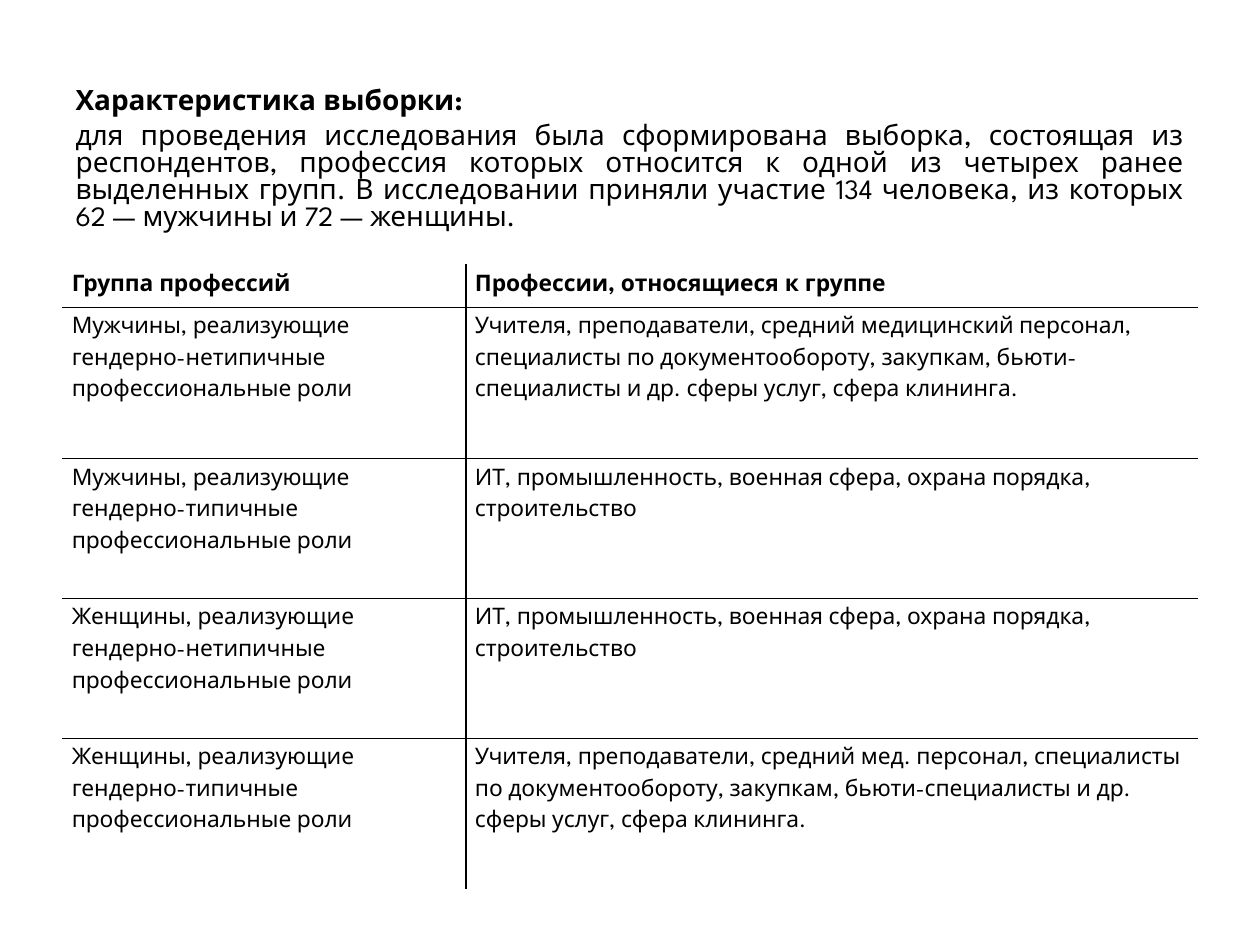
from dataclasses import dataclass

from lxml.etree import SubElement
from pptx import Presentation
from pptx.dml.color import RGBColor
from pptx.enum.text import MSO_ANCHOR as Anchor, MSO_AUTO_SIZE as AutoSize, PP_ALIGN as Align
from pptx.oxml.ns import qn
from pptx.util import Inches, Pt


@dataclass(frozen=True)
class Theme:
    font: str = "League Spartan"
    text: str = "000000"
    paper: str = "FFFFFF"
    intro_size: int = 16
    table_size: int = 13
    border_width: int = 1


def set_attributes(target, values):
    for name, value in values.items():
        setattr(target, name, value)


class SlideBuilder:
    def __init__(self, slide, theme):
        self.slide = slide
        self.theme = theme

    def format_paragraph(self, paragraph, text, size, bold, layout):
        run = paragraph.add_run()
        run.text = text
        set_attributes(run.font, {"name": self.theme.font, "size": Pt(size), "bold": bold})
        run.font.color.rgb = RGBColor.from_string(self.theme.text)
        set_attributes(paragraph, layout)

    def body(self, box, heading, text):
        placeholder = self.slide.placeholders[1]
        set_attributes(placeholder, dict(zip(("left", "top", "width", "height"), map(Inches, box))))
        frame = placeholder.text_frame
        set_attributes(frame, {"word_wrap": True, "auto_size": AutoSize.NONE,
                               "vertical_anchor": Anchor.TOP})
        paragraphs = [frame.paragraphs[0], frame.add_paragraph()]
        contents = [(heading, True, 0), (text, False, 4.5)]
        for paragraph, (content, bold, space) in zip(paragraphs, contents):
            layout = {"alignment": Align.JUSTIFY, "line_spacing": 0.8, "space_before": Pt(space)}
            self.format_paragraph(paragraph, content, self.theme.intro_size, bold, layout)
            properties = paragraph._p.get_or_add_pPr()
            properties.set("marL", "0")
            properties.set("indent", "0")
            SubElement(properties, qn("a:buNone"))

    def border(self, cell, side, color):
        line = SubElement(cell._tc.get_or_add_tcPr(), qn(f"a:ln{side}"),
                          w=str(Pt(self.theme.border_width)))
        fill = SubElement(line, qn("a:solidFill"))
        SubElement(fill, qn("a:srgbClr"), val=color)

    def table(self, box, widths, heights, rows):
        shape = self.slide.shapes.add_table(len(rows), len(widths), *map(Inches, box))
        table = shape.table
        set_attributes(table, {"first_row": False, "horz_banding": False})
        for column, width in zip(table.columns, widths):
            column.width = Inches(width)
        for row, height in zip(table.rows, heights):
            row.height = Inches(height)
        last_row, last_column = len(rows) - 1, len(widths) - 1
        for i, row in enumerate(rows):
            for j, text in enumerate(row):
                cell = table.cell(i, j)
                set_attributes(cell, {"margin_left": Inches(0.07), "margin_right": Inches(0.07),
                                      "margin_top": 0, "margin_bottom": 0})
                self.format_paragraph(cell.text_frame.paragraphs[0], text,
                                      self.theme.table_size, i == 0, {"line_spacing": 1.5})
                outer_edges = {"L": j == 0, "R": j == last_column, "T": i == 0, "B": i == last_row}
                for side, outer in outer_edges.items():
                    self.border(cell, side, self.theme.paper if outer else self.theme.text)
                cell.fill.background()


def main():
    presentation = Presentation()
    set_attributes(presentation, {"slide_width": Inches(10), "slide_height": Inches(7.5)})
    slide = presentation.slides.add_slide(presentation.slide_layouts[1])
    title = slide.shapes.title._element
    title.getparent().remove(title)
    builder = SlideBuilder(slide, Theme())

    builder.body(
        (0.5, 0.66, 9, 4.95),
        "Характеристика выборки:",
        "для проведения исследования была сформирована выборка, состоящая из респондентов, "
        "профессия которых относится к одной из четырех ранее выделенных групп. "
        "В исследовании приняли участие 134 человека, из которых 62 — мужчины и 72 — женщины.",
    )

    technical = "ИТ, промышленность, военная сфера, охрана порядка, строительство"
    service = ("Учителя, преподаватели, средний {} персонал, специалисты по документообороту, "
               "закупкам, бьюти-специалисты и др. сферы услуг, сфера клининга.")
    group = "{}, реализующие гендерно-{} профессиональные роли"
    rows = [
        ("Группа профессий", "Профессии, относящиеся к группе"),
        (group.format("Мужчины", "нетипичные"), service.format("медицинский")),
        (group.format("Мужчины", "типичные"), technical),
        (group.format("Женщины", "нетипичные"), technical),
        (group.format("Женщины", "типичные"), service.format("мед.")),
    ]
    builder.table((0.5, 2.1, 9, 4.95), (3.2, 5.8), (0.34, 1.2, 1.11, 1.11, 1.2), rows)
    presentation.save("out.pptx")


if __name__ == "__main__":
    main()
